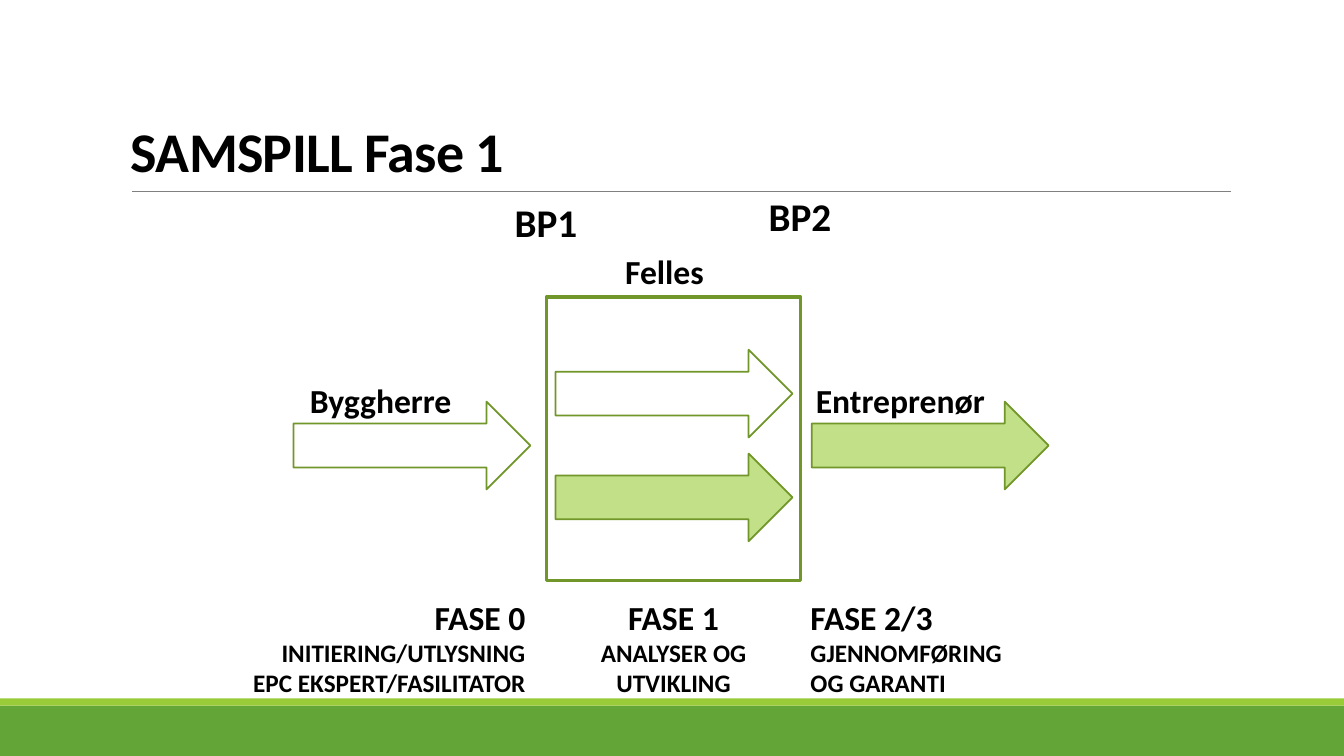
from pptx import Presentation
from pptx.dml.color import RGBColor
from pptx.enum.shapes import MSO_CONNECTOR as CONN, MSO_SHAPE as SHAPE
from pptx.enum.text import MSO_ANCHOR as ANCHOR, PP_ALIGN as ALIGN
from pptx.oxml.ns import qn
from pptx.util import Inches, Pt
from lxml.etree import SubElement

WIDTH, HEIGHT = 13.33, 7.5
GREEN, LIME, PALE, EDGE = "63A537", "99CB38", "C2E088", "719629"
WHITE, BLACK, GREY = "FFFFFF", "000000", "808080"

TITLE = "SAMSPILL Fase 1"
BANDS = [(7, 0.5, GREEN), (6.93, 0.07, LIME)]
COLS = [2.91, 5.51, 8.05]
ROW_TOP, ROW_STEP = 3.47, 0.515
ARROW_W, ARROW_H = 2.35, 0.87
ARROWS = [(1, 0, WHITE), (2, 1, PALE), (0, 1, WHITE), (1, 2, PALE)]
FRAME_X, FRAME_Y, FRAME_W, FRAME_H = 5.42, 2.95, 2.52, 2.81
PHASE_Y, PHASE_H = 5.87, 1.11
PHASES = [
    (1.66, 3.65, ALIGN.RIGHT,
     ["FASE 0", "INITIERING/UTLYSNING", "EPC EKSPERT/FASILITATOR"]),
    (FRAME_X, FRAME_W, ALIGN.CENTER, ["FASE 1", "ANALYSER OG UTVIKLING"]),
    (FRAME_X + FRAME_W, 2.45, ALIGN.LEFT,
     ["FASE 2/3", "GJENNOMFØRING OG GARANTI"]),
]
LABELS = [
    ("BP1", 4.84, 1.92, 1.15, 0.57, 28),
    ("BP2", 7.36, 1.86, 1.15, 0.57, 28),
    ("Byggherre", 2.6, 3.72, 2.35, 0.5, 24),
    ("Entreprenør", 7.93, 3.72, 2, 0.5, 24),
    ("Felles", 5.59, 2.44, 2, 0.5, 24),
]


def color(value):
    return RGBColor.from_string(value)


def add_box(s, kind, x, y, w, h, fill=None, line=None, weight=1.25):
    sp = s.shapes.add_shape(kind, Inches(x), Inches(y), Inches(w), Inches(h))
    sp.shadow.inherit = False
    if fill:
        sp.fill.solid()
        sp.fill.fore_color.rgb = color(fill)
    else:
        sp.fill.background()
    if line:
        sp.line.color.rgb = color(line)
        sp.line.width = Pt(weight)
    else:
        sp.line.fill.background()


def add_text(s, x, y, w, h, lines, sizes, align=ALIGN.CENTER):
    sp = s.shapes.add_textbox(Inches(x), Inches(y), Inches(w), Inches(h))
    tf = sp.text_frame
    tf.word_wrap = True
    for i, (text, size) in enumerate(zip(lines, sizes)):
        p = tf.add_paragraph() if i else tf.paragraphs[0]
        p.alignment = align
        r = p.add_run()
        r.text = text
        for key, value in {"name": "Calibri", "size": Pt(size), "bold": True}.items():
            setattr(r.font, key, value)
        r.font.color.rgb = color(BLACK)
    return tf


def main():
    prs = Presentation()
    prs.slide_width, prs.slide_height = Inches(WIDTH), Inches(HEIGHT)
    s = prs.slides.add_slide(prs.slide_layouts[6])

    for y, h, fill in BANDS:
        add_box(s, SHAPE.RECTANGLE, 0, y, WIDTH, h, fill)
    rule = s.shapes.add_connector(
        CONN.STRAIGHT, Inches(1.31), Inches(1.9), Inches(12.21), Inches(1.9))
    rule.line.color.rgb = color(GREY)
    rule.line.width = Pt(0.5)
    SubElement(rule.line._get_or_add_ln().getparent(), qn("a:effectLst"))

    tf = add_text(s, 1.2, 0.28, 11, 1.59, [TITLE], [40], ALIGN.LEFT)
    tf.vertical_anchor = ANCHOR.BOTTOM
    p = tf.paragraphs[0]
    p.line_spacing = 0.85
    p.runs[0].font._element.set("spc", "-50")

    for col, row, fill in ARROWS:
        add_box(s, SHAPE.RIGHT_ARROW, COLS[col], ROW_TOP + row * ROW_STEP,
                ARROW_W, ARROW_H, fill, EDGE)
    add_box(s, SHAPE.RECTANGLE, FRAME_X, FRAME_Y, FRAME_W, FRAME_H,
            line=EDGE, weight=2.75)
    for x, w, align, lines in PHASES:
        sizes = [24] + [18] * (len(lines) - 1)
        add_text(s, x, PHASE_Y, w, PHASE_H, lines, sizes, align)
    for text, x, y, w, h, size in LABELS:
        add_text(s, x, y, w, h, [text], [size])

    prs.save("out.pptx")


if __name__ == "__main__":
    main()
